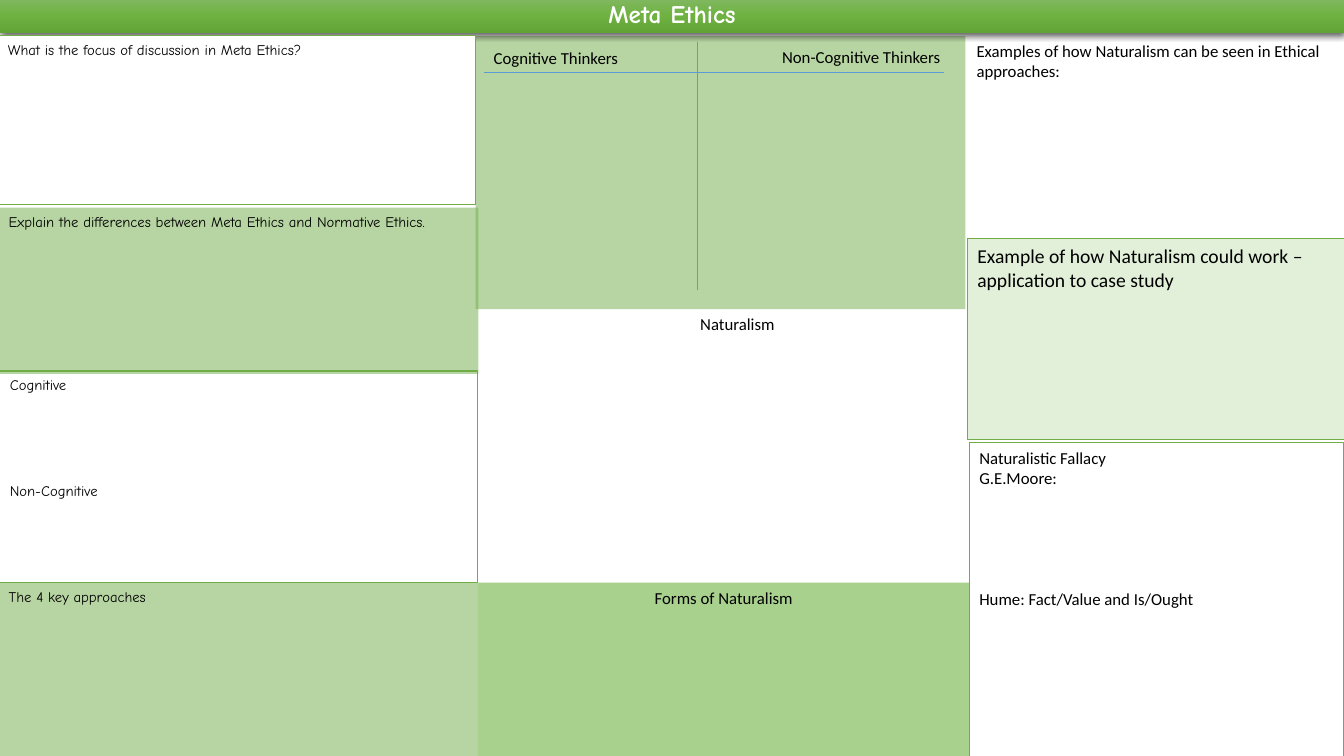
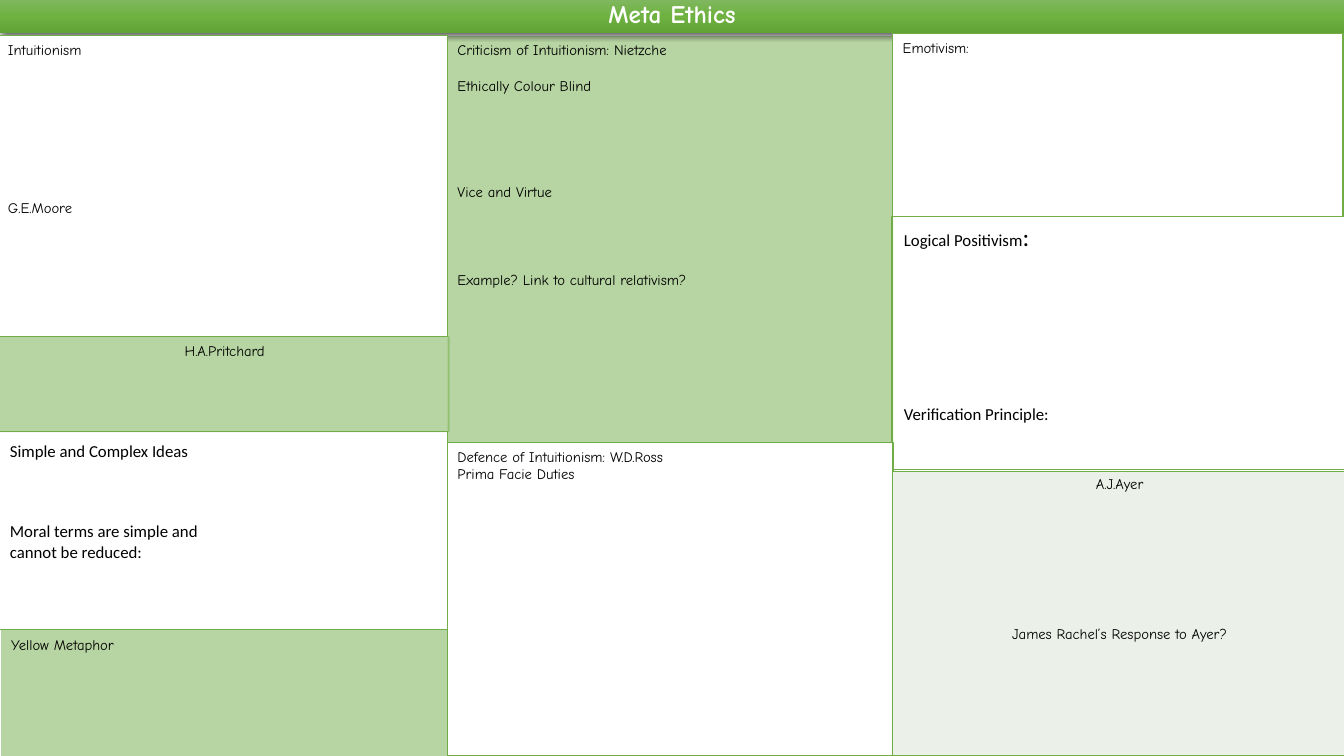
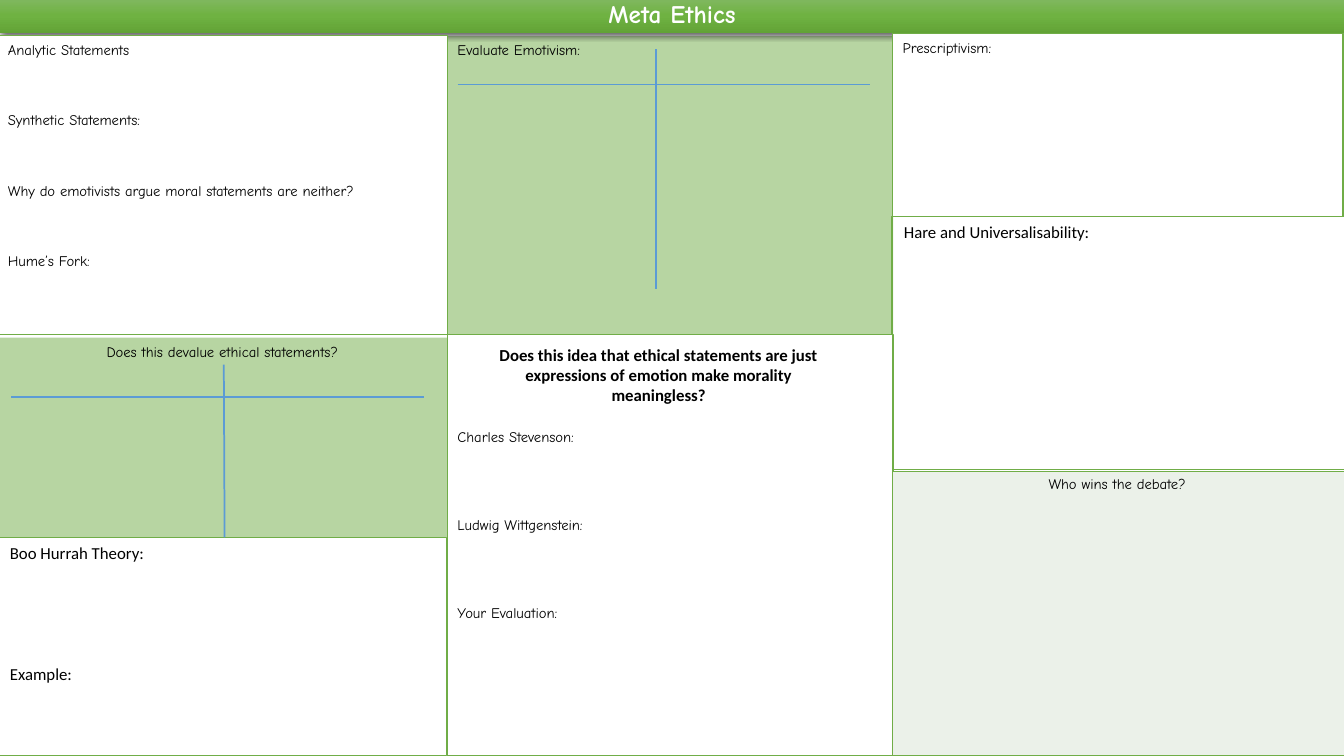
from copy import deepcopy
from dataclasses import dataclass

from lxml.etree import SubElement
from pptx import Presentation
from pptx.dml.color import RGBColor
from pptx.enum.shapes import MSO_CONNECTOR, MSO_SHAPE
from pptx.enum.text import MSO_ANCHOR, MSO_AUTO_SIZE, PP_ALIGN
from pptx.oxml import parse_xml
from pptx.oxml.ns import nsdecls, qn
from pptx.util import Cm, Pt

GREEN, BLUE, BLACK, WHITE = "70AD47", "5B9BD5", "000000", "FFFFFF"
BAND = ["81B861", "6FB242", "62A336"]
PAGE_W, PAGE_H = 33.87, 19.05

STYLES = {
    "tint": (GREEN, 50, None),
    "white": (WHITE, 100, 1),
    "outline": (None, 100, 0.75),
    "leaf": ("A9D18E", 100, None),
    "pale": ("E2F0D9", 100, 0.75),
}
NOTE = ("Comic Neue", 10.5)
BODY = ("Calibri", 12)
LEAD = ("Calibri", 14)

MID, RIGHT = 11.28, 22.5
LEFT_W, MID_W, RIGHT_W = 11.33, 11.23, 11.35
RIGHT_TOP = (RIGHT, 0.84, RIGHT_W, 4.62)
RIGHT_MIDDLE = (22.48, 5.46, 11.4, 6.38)
RIGHT_TABLE = (RIGHT, 11.89, 11.43, 7.16)


@dataclass
class Panel:
    style: str
    box: tuple
    font: tuple = NOTE
    paras: tuple = ()
    center: bool = False
    bold: bool = False
    top: float = 0.13


# Each paragraph is (gap in lines, text) or (gap, text, larger ending).
SLIDES = [
    {
        "behind": [Panel("tint", (11.99, 0.91, 12.34, 6.88))],
        "front": [
            Panel("white", (-0.05, 0.89, 12.04, 4.27), NOTE,
                  ((0, "What is the focus of discussion in Meta Ethics?"),)),
            Panel("tint", (-0.03, 5.23, 12.09, 4.19), NOTE,
                  ((0, "Explain the differences between Meta Ethics and Normative Ethics."),)),
            Panel("tint", (-0.03, 14.68, 12.09, 4.37), NOTE, ((0, "The 4 key approaches"),)),
            Panel("outline", (0, 9.35, 12.04, 5.33), NOTE,
                  ((0, "Cognitive"), (5, "Non-Cognitive"))),
            Panel("leaf", (12.04, 14.68, 12.4, 4.37), BODY,
                  ((0, "Forms of Naturalism"),), center=True),
            Panel("text", (12.19, 1.07, 4.24, 0.76), BODY, ((0, "Cognitive Thinkers"),)),
            Panel("text", (19.46, 1.04, 4.57, 0.76), BODY, ((0, "Non-Cognitive Thinkers"),)),
            Panel("text", (15.37, 7.77, 6.43, 0.76), BODY, ((0, "Naturalism"),), center=True),
            Panel("text", (24.36, 0.89, 9.53, 5.13), BODY,
                  ((0, "Examples of how Naturalism can be seen in Ethical approaches:"),)),
            Panel("pale", (24.38, 6.02, 9.53, 5.05), LEAD,
                  ((0, "Example of how Naturalism could work – application to case study"),)),
            Panel("outline", (24.43, 11.15, 9.42, 7.95), BODY,
                  ((0, "Naturalistic Fallacy"), (0, "G.E.Moore:"),
                   (5, "Hume: Fact/Value and Is/Ought"))),
        ],
        "lines": [(17.58, 1.07, 17.58, 7.32), (12.19, 1.83, 23.8, 1.83)],
        "table": (),
    },
    {
        "behind": [
            Panel("tint", (MID, 0.91, MID_W, 10.24), NOTE,
                  ((0, "Criticism of Intuitionism: Nietzche"), (1, "Ethically Colour Blind"),
                   (5, "Vice and Virtue"), (4, "Example? Link to cultural relativism?"))),
            Panel("outline", RIGHT_MIDDLE),
        ],
        "front": [
            Panel("white", (-0.05, 0.89, LEFT_W, 7.59), NOTE,
                  ((0, "Intuitionism"), (8, "G.E.Moore"))),
            Panel("tint", (0, 8.48, LEFT_W, 2.41), NOTE, ((0, "H.A.Pritchard"),), center=True),
            Panel("white", RIGHT_TOP, NOTE, ((0, "Emotivism:"),)),
            Panel("tint", (0.03, 15.88, 11.3, 3.17), NOTE, ((0, "Yellow Metaphor"),)),
            Panel("outline", (0, 10.87, MID, 5)),
            Panel("white", (MID, 11.15, MID_W, 7.9), NOTE,
                  ((0, "Defence of Intuitionism: W.D.Ross"), (0, "Prima Facie Duties"))),
            Panel("text", (0, 10.97, 5.64, 3.33), BODY,
                  ((0, "Simple and Complex Ideas"),
                   (3, "Moral terms are simple and cannot be reduced:"))),
            Panel("text", (22.53, 5.46, 5, 5.38), BODY,
                  ((0, "Logical Positivism", ":"), (7.5, "Verification Principle:"))),
        ],
        "lines": [],
        "table": ((0, "A.J.Ayer"), (7.55, "James Rachel’s Response to Ayer?")),
    },
    {
        "behind": [
            Panel("tint", (MID, 0.91, MID_W, 7.54), NOTE, ((0, "Evaluate Emotivism:"),)),
            Panel("outline", RIGHT_MIDDLE),
        ],
        "front": [
            Panel("white", (-0.05, 0.89, LEFT_W, 7.54), NOTE,
                  ((0, "Analytic Statements"), (3, "Synthetic Statements:"),
                   (3, "Why do emotivists argue moral statements are neither?"),
                   (3, "Hume’s Fork:"))),
            Panel("tint", (0, 8.51, LEFT_W, 5.03), NOTE,
                  ((0, "Does this devalue ethical statements? "),), center=True),
            Panel("white", RIGHT_TOP, NOTE, ((0, "Prescriptivism:"),)),
            Panel("outline", (-0.03, 13.54, MID, 5.51)),
            Panel("white", (MID, 8.43, MID_W, 10.62), NOTE,
                  ((0, "Charles Stevenson:"), (4, "Ludwig Wittgenstein:"),
                   (4, "Your Evaluation:")), top=2.35),
            Panel("text", (0, 13.54, 5.64, 3.84), BODY,
                  ((0, "Boo Hurrah Theory:"), (5, "Example:"))),
            Panel("text", (22.53, 5.46, 8.2, 0.76), BODY,
                  ((0, "Hare and Universalisability:"),)),
            Panel("text", (11.89, 8.56, 9.42, 1.8), BODY,
                  ((0, "Does this idea that ethical statements are just expressions of "
                       "emotion make morality meaningless?"),), center=True, bold=True),
        ],
        "lines": [(5.64, 9.19, 5.66, 13.54), (0.28, 10.01, 10.69, 10.01),
                  (16.54, 1.24, 16.54, 7.29), (11.53, 2.13, 21.92, 2.13)],
        "table": ((0, "Who wins the debate? "),),
    },
]


def rgb(value):
    return RGBColor.from_string(value)


def cm(values):
    return [Cm(v) for v in values]


def write(tf, paras, font, center=False, bold=False):
    name, size = font
    for i, (gap, text, *ending) in enumerate(paras):
        p = tf.paragraphs[0] if i == 0 else tf.add_paragraph()
        p.alignment = PP_ALIGN.CENTER if center else PP_ALIGN.LEFT
        p.space_before = Pt(round(gap * size * 1.2, 1))
        p.font.name, p.font.size, p.font.bold = name, Pt(size), bold
        p.font.color.rgb = rgb(BLACK)
        p.add_run().text = text
        for tail in ending:
            r = p.add_run()
            r.text = tail
            r.font.size = Pt(size * 1.5)


def add_panel(s, panel):
    if panel.style == "text":
        sp = s.shapes.add_textbox(*cm(panel.box))
    else:
        fill, opacity, line = STYLES[panel.style]
        sp = s.shapes.add_shape(MSO_SHAPE.RECTANGLE, *cm(panel.box))
        sp.shadow.inherit = False
        if fill:
            sp.fill.solid()
            sp.fill.fore_color.rgb = rgb(fill)
        else:
            sp.fill.background()
        if opacity < 100:
            color = sp._element.spPr.find(".//" + qn("a:srgbClr"))
            SubElement(color, qn("a:alpha"), val=str(opacity * 1000))
        if line:
            sp.line.color.rgb = rgb(GREEN)
            sp.line.width = Pt(line)
        else:
            sp.line.fill.background()
    tf = sp.text_frame
    tf.word_wrap = True
    tf.vertical_anchor = MSO_ANCHOR.TOP
    tf.margin_top = Cm(panel.top)
    write(tf, panel.paras, panel.font, panel.center, panel.bold)


def add_title(s):
    title = s.shapes.title
    title.left, title.top, title.width, title.height = cm((0, -0.05, PAGE_W, 0.89))
    title.fill.gradient()
    title.fill.gradient_angle = 270
    spPr = title._element.spPr
    stops = spPr.find(".//" + qn("a:gsLst"))
    stops.insert(1, deepcopy(stops[0]))
    stops[1].set("pos", "50000")
    for stop, color in zip(title.fill.gradient_stops, BAND):
        stop.color.rgb = rgb(color)
    title.line.fill.background()
    spPr.append(parse_xml(
        f'<a:effectLst {nsdecls("a")}><a:outerShdw blurRad="57150" dist="19050" dir="5400000" '
        'algn="ctr" rotWithShape="0"><a:srgbClr val="000000"><a:alpha val="63000"/>'
        '</a:srgbClr></a:outerShdw></a:effectLst>'))
    tf = title.text_frame
    tf.text = "Meta Ethics"
    tf.auto_size = MSO_AUTO_SIZE.NONE
    tf.vertical_anchor = MSO_ANCHOR.MIDDLE
    p = tf.paragraphs[0]
    p.alignment = PP_ALIGN.CENTER
    p.line_spacing = 0.9
    p.font.name, p.font.size, p.font.bold = "Comic Neue", Pt(18), True
    p.font.color.rgb = rgb(WHITE)
    s.shapes._spTree.append(title._element)


def add_line(s, ends):
    line = s.shapes.add_connector(MSO_CONNECTOR.STRAIGHT, *cm(ends))
    line.line.color.rgb = rgb(BLUE)
    line.line.width = Pt(1.25)
    SubElement(line._element.spPr, qn("a:effectLst"))


def add_debate_table(s, paras):
    cell = s.shapes.add_table(1, 1, *cm(RIGHT_TABLE)).table.cell(0, 0)
    cell.fill.solid()
    cell.fill.fore_color.rgb = rgb("EBF1E9")
    tcPr = cell._tc.get_or_add_tcPr()
    for i, side in enumerate(("lnL", "lnR", "lnT", "lnB")):
        tcPr.insert(i, parse_xml(
            f'<a:{side} {nsdecls("a")} w="12700"><a:solidFill><a:srgbClr val="{GREEN}"/>'
            f'</a:solidFill></a:{side}>'))
    write(cell.text_frame, paras, NOTE, center=True)


def main():
    prs = Presentation()
    prs.slide_width, prs.slide_height = cm((PAGE_W, PAGE_H))
    for content in SLIDES:
        s = prs.slides.add_slide(prs.slide_layouts[5])
        for panel in content["behind"]:
            add_panel(s, panel)
        add_title(s)
        for panel in content["front"]:
            add_panel(s, panel)
        for ends in content["lines"]:
            add_line(s, ends)
        if content["table"]:
            add_debate_table(s, content["table"])
    prs.save("out.pptx")


if __name__ == "__main__":
    main()
